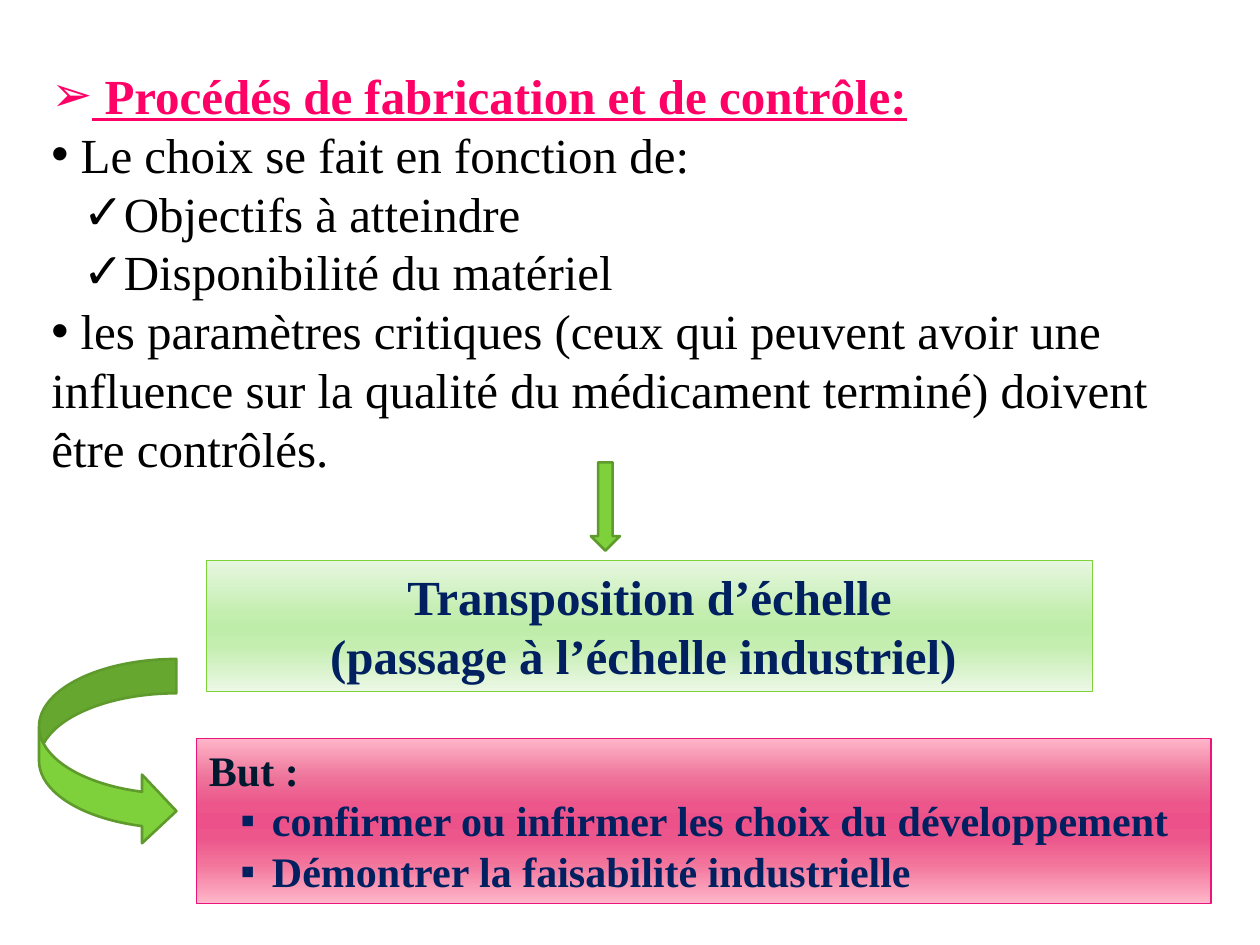
from lxml.etree import SubElement
from pptx import Presentation
from pptx.dml.color import RGBColor
from pptx.enum.shapes import MSO_SHAPE
from pptx.enum.text import MSO_ANCHOR, PP_ALIGN
from pptx.oxml.ns import qn
from pptx.util import Inches, Pt

FONT = "Times New Roman"
PINK = RGBColor(0xFF, 0x00, 0x66)
BLACK = RGBColor(0x00, 0x00, 0x00)
NAVY = RGBColor(0x00, 0x20, 0x60)
INK = RGBColor(0x00, 0x19, 0x2F)
GREEN = RGBColor(0x7F, 0xD1, 0x3B)
MOSS = RGBColor(0x5E, 0x9B, 0x2C)
ROSE = RGBColor(0xEA, 0x15, 0x7A)
MINT = [(0, "E6F7E0"), (40, "C4EEB0"), (50, "BEEDA9"), (65, "C4EEB0"), (100, "ECF8E6")]
BLUSH = [(0, "FFB6C9"), (25, "ED7198"), (40, "EC568B"), (50, "EC5289"),
         (60, "EC568B"), (75, "F2729A"), (100, "FFB6C9")]

# Grid of 100 columns by 75 rows; a box is left, top, width, height
COLS, ROWS = 100, 75
WIDE, HIGH = Inches(10), Inches(7.5)


def place(box):
    left, top, width, height = box
    return (int(left * WIDE / COLS), int(top * HIGH / ROWS),
            int(width * WIDE / COLS), int(height * HIGH / ROWS))


def write(frame, text, size=28, color=BLACK, bold=False, under=False,
          align=PP_ALIGN.LEFT, mark=None, level=0):
    """Add one paragraph, with a bullet if a mark is given."""
    first = frame.paragraphs[0]
    para = frame.add_paragraph() if first.runs else first
    para.alignment, para.level = align, level
    run = para.add_run()
    run.text = text
    font = run.font
    font.name, font.size, font.bold, font.underline = FONT, Pt(size), bold, under
    font.color.rgb = color
    if mark:
        props = para._p.get_or_add_pPr()
        props.set("marL", str(Inches(0.5 * level)))
        props.set("indent", str(Inches(-0.25 * level)))
        SubElement(props, qn("a:buFont"), typeface="Arial")
        SubElement(props, qn("a:buChar"), char=mark)


def fade(shape, stops):
    """Fill a shape with a vertical gradient."""
    shape.fill.gradient()
    shape.fill.gradient_angle = 270
    stop_list = shape.fill._fill._gradFill.find(qn("a:gsLst"))
    for old in list(stop_list):
        stop_list.remove(old)
    for share, tint in stops:
        stop = SubElement(stop_list, qn("a:gs"), pos=str(share * 1000))
        SubElement(stop, qn("a:srgbClr"), val=tint)


def draw(slide, kind, box, line, weight):
    shape = slide.shapes.add_shape(kind, *place(box))
    shape.shadow.inherit = False
    shape.line.color.rgb, shape.line.width = line, Pt(weight)
    return shape


def panel(slide, box, stops, line):
    shape = draw(slide, MSO_SHAPE.RECTANGLE, box, line, 0.94)
    fade(shape, stops)
    frame = shape.text_frame
    frame.word_wrap, frame.vertical_anchor = True, MSO_ANCHOR.TOP
    return frame


def arrow(slide, kind, box):
    shape = draw(slide, kind, box, MOSS, 1.5)
    shape.fill.solid()
    shape.fill.fore_color.rgb = GREEN


def method(slide, box):
    frame = slide.shapes.add_textbox(*place(box)).text_frame
    frame.word_wrap = True
    write(frame, " Procédés de fabrication et de contrôle:",
          color=PINK, bold=True, under=True, mark="➢")
    write(frame, " Le choix se fait en fonction de:", mark="•")
    for item in ("Objectifs à atteindre", "Disponibilité du matériel"):
        write(frame, item, mark="✓", level=1)
    write(frame, " les paramètres critiques (ceux qui peuvent avoir une influence "
          "sur la qualité du médicament terminé) doivent être contrôlés.", mark="•")


def scale(slide, box):
    frame = panel(slide, box, MINT, GREEN)
    for text in ("Transposition d’échelle", "(passage à l’échelle industriel) "):
        write(frame, text, color=NAVY, bold=True, align=PP_ALIGN.CENTER)


def goal(slide, box):
    frame = panel(slide, box, BLUSH, ROSE)
    write(frame, "But :", size=24, color=INK, bold=True)
    for text in ("confirmer ou infirmer les choix du développement",
                 "Démontrer la faisabilité industrielle"):
        write(frame, text, size=24, color=NAVY, bold=True, mark="▪", level=1)


def main():
    deck = Presentation()
    deck.slide_width, deck.slide_height = WIDE, HIGH
    slide = deck.slides.add_slide(deck.slide_layouts[6])
    # Method, then scale-up, then its goal
    method(slide, (3.1, 4.7, 93, 34))
    scale(slide, (16.4, 44.5, 70.3, 10.4))
    arrow(slide, MSO_SHAPE.DOWN_ARROW, (46.9, 36.7, 2.3, 7))
    goal(slide, (15.6, 58.6, 80.5, 13.1))
    arrow(slide, MSO_SHAPE.CURVED_RIGHT_ARROW, (3.1, 52.3, 10.9, 14.8))
    deck.save("out.pptx")


if __name__ == "__main__":
    main()
